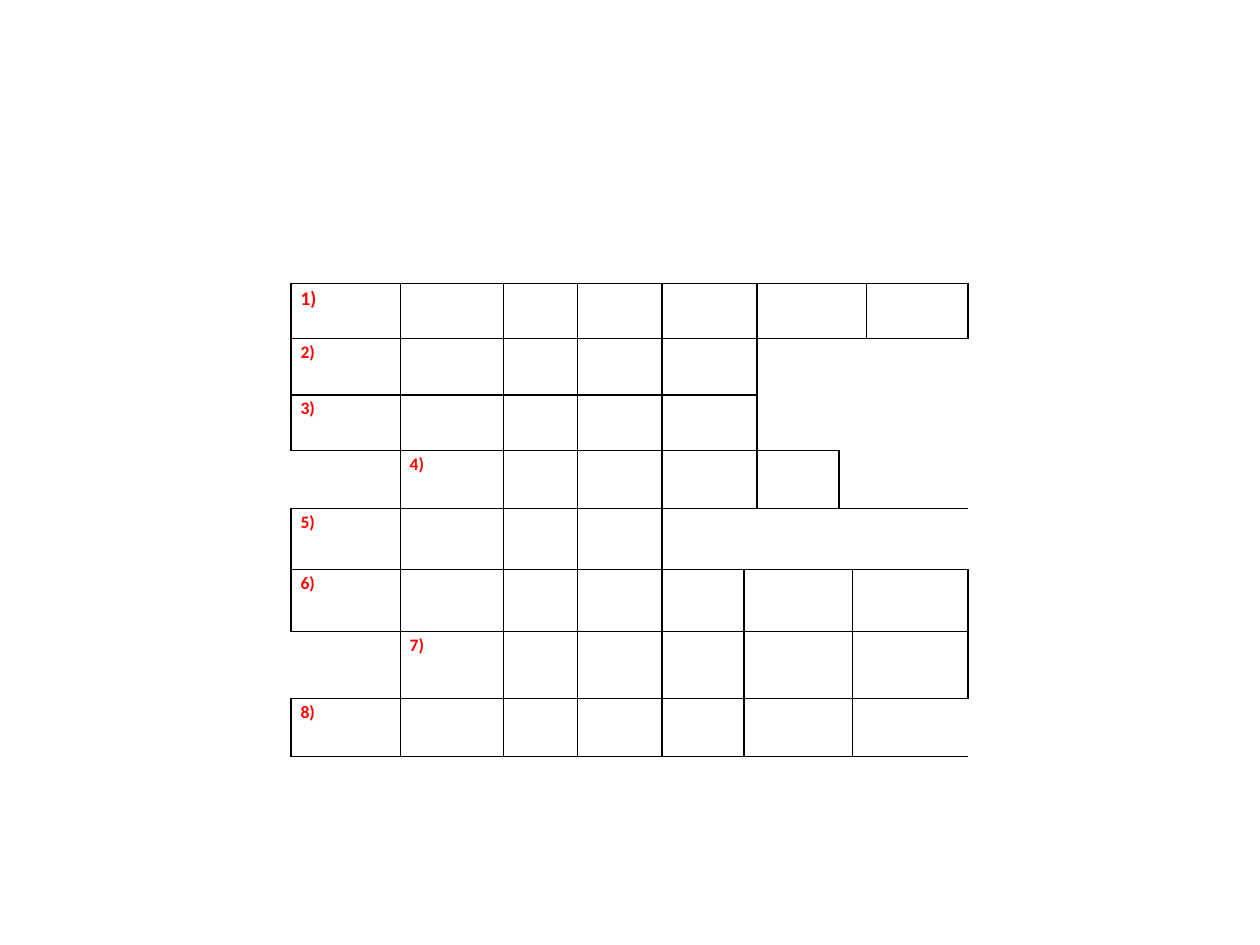
import pptx
import pptx.dml.color
import pptx.util
from lxml import etree
from pptx.oxml.ns import qn
from pptx.util import Cm, Pt

COLORS = {"clue": "FF0000", "grid": "000000"}
COLUMN_WIDTHS = [2.2, 2.08, 1.49, 1.71, 1.65, 0.26, 1.65, 0.28, 0.28, 2.04]
ROW_HEIGHTS = [1.11, 1.14, 1.12, 1.17, 1.23, 1.25, 1.35, 1.17]
CLUE_COLUMNS = [0, 0, 0, 1, 0, 0, 1, 0]

# First row, first column, last row, last column
MERGES = [
    (0, 4, 0, 5), (0, 6, 0, 8),
    (1, 4, 1, 5), (1, 6, 2, 9),
    (2, 4, 2, 5),
    (3, 4, 3, 5), (3, 7, 3, 9),
    (4, 4, 4, 9),
    (5, 5, 5, 7), (5, 8, 5, 9),
    (6, 5, 6, 7), (6, 8, 6, 9),
    (7, 5, 7, 7), (7, 8, 7, 9),
]
# Blank areas around the answers keep only these sides
OPEN_SIDES = {(1, 6): "LTB", (3, 0): "RTB", (3, 7): "L",
              (4, 4): "LTB", (6, 0): "RTB", (7, 8): "LTB"}
CELL_FORMAT = {"margin_left": Cm(0.19), "margin_right": Cm(0.19),
               "margin_top": 0, "margin_bottom": 0}
CLUE_FONT = {"name": "Calibri", "bold": True}


def set_borders(cell, visible_sides):
    properties = cell._tc.get_or_add_tcPr()
    for side in "LRTB":
        line = etree.SubElement(properties, qn(f"a:ln{side}"), w=str(Pt(1)))
        if side in visible_sides:
            fill = etree.SubElement(line, qn("a:solidFill"))
            etree.SubElement(fill, qn("a:srgbClr"), val=COLORS["grid"])
        else:
            etree.SubElement(line, qn("a:noFill"))


presentation = pptx.Presentation()
presentation.slide_width, presentation.slide_height = Cm(25.4), Cm(19.05)
slide = presentation.slides.add_slide(presentation.slide_layouts[6])

crossword = slide.shapes.add_table(
    len(ROW_HEIGHTS), len(COLUMN_WIDTHS), Cm(5.87), Cm(5.71),
    Cm(sum(COLUMN_WIDTHS)), Cm(sum(ROW_HEIGHTS))).table
crossword.first_row = False
crossword.horz_banding = False
for column, width in zip(crossword.columns, COLUMN_WIDTHS):
    column.width = Cm(width)
for row, height in zip(crossword.rows, ROW_HEIGHTS):
    row.height = Cm(height)

for top, left, bottom, right in MERGES:
    crossword.cell(top, left).merge(crossword.cell(bottom, right))

for row in range(len(ROW_HEIGHTS)):
    for column in range(len(COLUMN_WIDTHS)):
        cell = crossword.cell(row, column)
        if cell.is_spanned:
            continue
        for name, value in CELL_FORMAT.items():
            setattr(cell, name, value)
        set_borders(cell, OPEN_SIDES.get((row, column), "LRTB"))
        cell.fill.background()

for row, column in enumerate(CLUE_COLUMNS):
    clue = crossword.cell(row, column).text_frame.paragraphs[0]
    clue.line_spacing = 1.15
    clue.space_after = Pt(10)
    number = clue.add_run()
    number.text = f"{row + 1})"
    for name, value in CLUE_FONT.items():
        setattr(number.font, name, value)
    number.font.size = Pt(11 if row == 0 else 10)
    number.font.color.rgb = pptx.dml.color.RGBColor.from_string(COLORS["clue"])

presentation.save("out.pptx")
